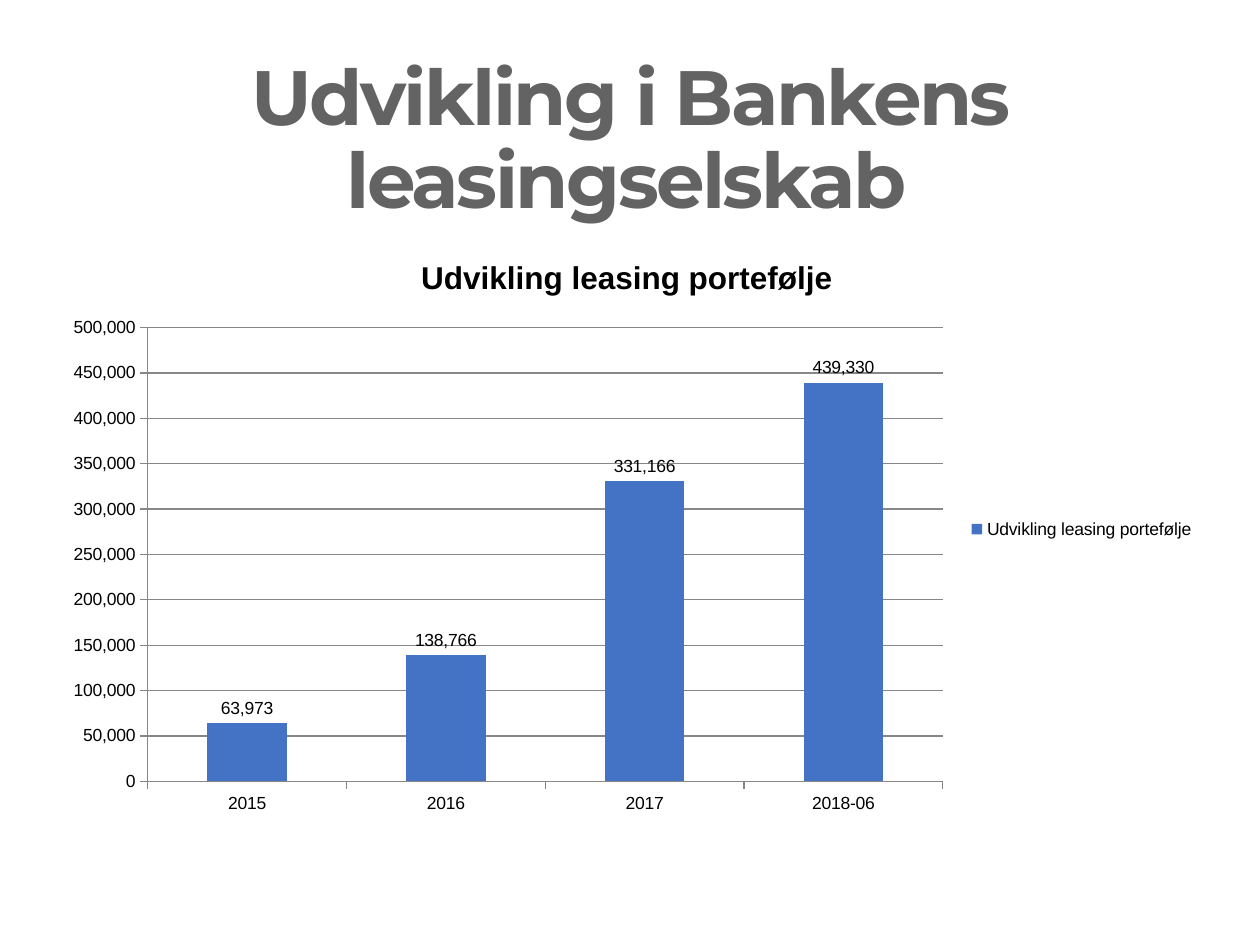
from pptx import Presentation
from pptx.chart.data import CategoryChartData
from pptx.dml.color import RGBColor
from pptx.enum.chart import XL_CHART_TYPE, XL_LABEL_POSITION, XL_LEGEND_POSITION, XL_TICK_MARK
from pptx.enum.text import MSO_ANCHOR, PP_ALIGN
from pptx.util import Inches, Pt

COLORS = {name: RGBColor.from_string(value) for name, value in {
    "title": "636363", "text": "000000", "bar": "4472C4", "line": "878787"}.items()}
NUMBER_FORMAT = "#,##0"
SERIES_NAME = "Udvikling leasing portefølje "

presentation = Presentation()
presentation.slide_width = Inches(10)
presentation.slide_height = Inches(7.5)
width, height = presentation.slide_width, presentation.slide_height
slide = presentation.slides.add_slide(presentation.slide_layouts[6])

# Slide title; the closing tab shifts the centred second line
title_box = slide.shapes.add_textbox(
    int(width * 0.069), Inches(0.4), int(width * 0.862), Inches(1.45))
text_frame = title_box.text_frame
text_frame.word_wrap = True
text_frame.vertical_anchor = MSO_ANCHOR.MIDDLE
paragraph = text_frame.paragraphs[0]
paragraph.alignment = PP_ALIGN.CENTER
paragraph.line_spacing = 0.9
run = paragraph.add_run()
run.text = "Udvikling i Bankens leasingselskab\t"
run.font.name = "Montserrat"
run.font.size = Pt(44)
run.font.bold = True
run.font.color.rgb = COLORS["title"]
run.font._element.set("spc", "-150")

# Leasing portfolio by year
chart_data = CategoryChartData(number_format=NUMBER_FORMAT)
chart_data.categories = ["2015", "2016", "2017", "2018-06"]
chart_data.add_series(SERIES_NAME, [63973, 138766, 331166, 439330])
chart = slide.shapes.add_chart(
    XL_CHART_TYPE.COLUMN_CLUSTERED, int(width * 0.04), Inches(1.85),
    int(width * 0.922), Inches(4.7), chart_data).chart
chart.font.name = "Arial"
chart.font.size = Pt(10)
chart.font.color.rgb = COLORS["text"]

# Chart title and legend
chart.has_title = True
chart.chart_title.include_in_layout = False
paragraph = chart.chart_title.text_frame.paragraphs[0]
paragraph.text = SERIES_NAME
paragraph.font.name = "Arial"
paragraph.font.size = Pt(18)
paragraph.font.bold = True
paragraph.font.color.rgb = COLORS["text"]
chart.has_legend = True
chart.legend.position = XL_LEGEND_POSITION.RIGHT
chart.legend.include_in_layout = False

# Axes and gridlines
value_axis = chart.value_axis
value_axis.minimum_scale = 0
value_axis.maximum_scale = 500000
value_axis.major_unit = 50000
value_axis.has_major_gridlines = True
value_axis.tick_labels.number_format = NUMBER_FORMAT
value_axis.tick_labels.number_format_is_linked = False
for axis in (chart.category_axis, value_axis):
    axis.major_tick_mark = XL_TICK_MARK.OUTSIDE
    axis.minor_tick_mark = XL_TICK_MARK.NONE
for line in (chart.category_axis.format.line, value_axis.format.line,
             value_axis.major_gridlines.format.line):
    line.color.rgb = COLORS["line"]
    line.width = Pt(0.75)

# Columns with value labels
plot = chart.plots[0]
plot.gap_width = 150
plot.vary_by_categories = False
series = plot.series[0]
series.format.fill.solid()
series.format.fill.fore_color.rgb = COLORS["bar"]
labels = series.data_labels
labels.show_value = True
labels.number_format = NUMBER_FORMAT
labels.number_format_is_linked = False
labels.position = XL_LABEL_POSITION.OUTSIDE_END

presentation.save("out.pptx")
